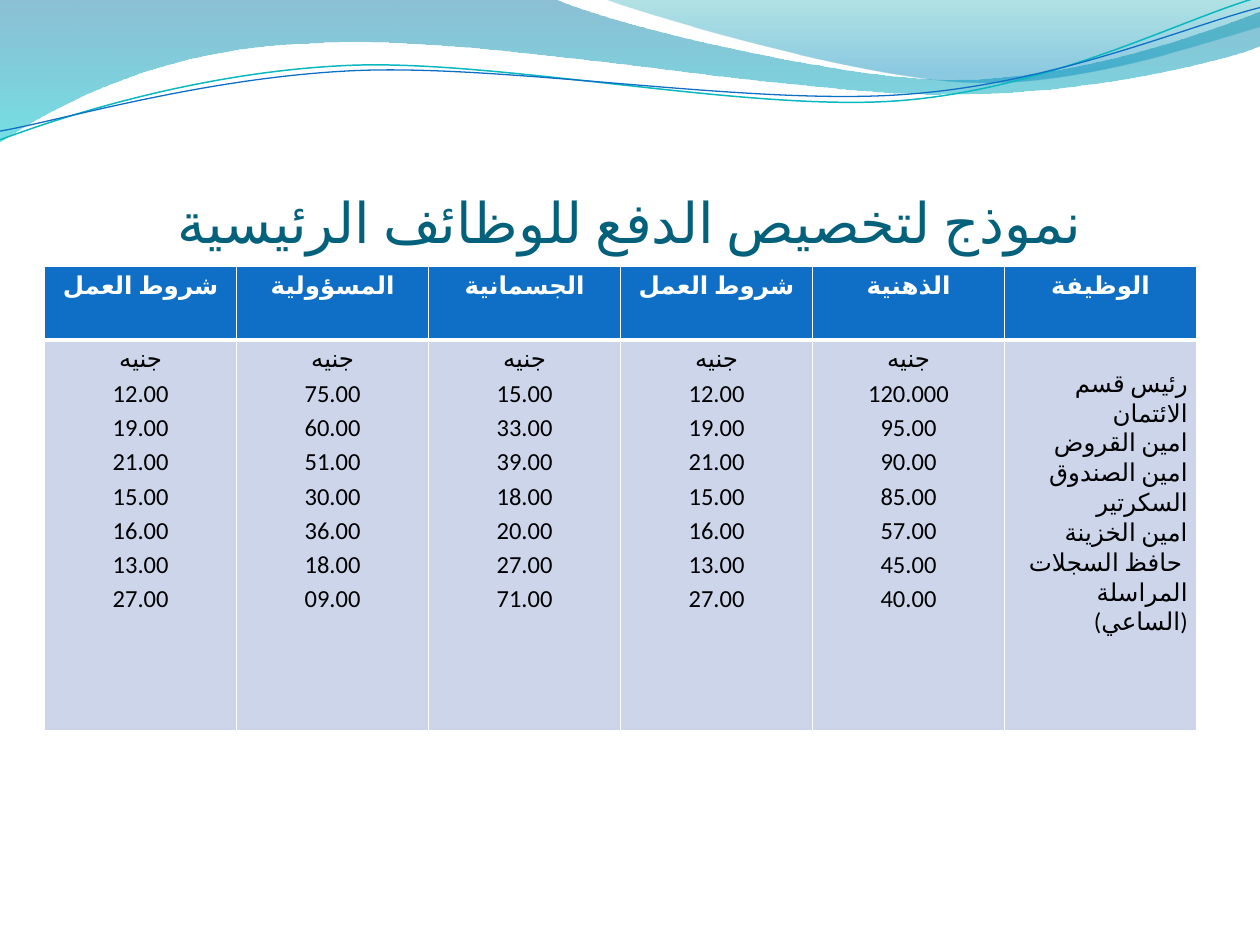
from lxml.etree import SubElement
from pptx import Presentation
from pptx.dml.color import RGBColor
from pptx.enum.lang import MSO_LANGUAGE_ID
from pptx.enum.text import MSO_ANCHOR, PP_ALIGN
from pptx.oxml import parse_xml
from pptx.oxml.ns import nsdecls, qn
from pptx.util import Pt

COLORS = {
    "title": "04617B", "header": "0F6FC6", "body": "CCD5EA",
    "white": "FFFFFF", "black": "000000", "teal line": "0AB8BF",
    "deep blue": "0074A1", "cyan": "00C6CF", "teal": "00A1A9", "blue": "008BBF",
}


def add_curve(slide, start, segments, close):
    """Draw segments of one end point (straight) or three points (Bézier)."""
    builder = slide.shapes.build_freeform(Pt(start[0]), Pt(start[1]))
    builder.add_line_segments([(Pt(x), Pt(y)) for segment in segments for x, y in segment],
                              close=close)
    shape = builder.convert_to_shape()
    shape.shadow.inherit = False
    outline = next(shape._element.iter(qn("a:path")))
    lines = iter(outline.findall(qn("a:lnTo")))
    for segment in segments:
        group = [next(lines) for point in segment]
        if len(group) == 3:
            curve = outline.makeelement(qn("a:cubicBezTo"))
            group[0].addprevious(curve)
            for line in group:
                curve.append(line[0])
                outline.remove(line)
    return shape


def write_paragraphs(text_frame, lines, size, color, align, spacing=1.0, bold=False):
    for index, line in enumerate(lines):
        paragraph = text_frame.paragraphs[0] if index == 0 else text_frame.add_paragraph()
        paragraph.text = line
        paragraph.alignment = align
        paragraph.line_spacing = spacing
        paragraph.font.name = "Calibri"
        paragraph.font.size = Pt(size)
        paragraph.font.bold = bold
        paragraph.font.color.rgb = RGBColor.from_string(COLORS[color])
        paragraph.font.language_id = MSO_LANGUAGE_ID.ARABIC
        # Arabic letters take the complex-script font and the run's language
        SubElement(paragraph.font._rPr, qn("a:cs"), typeface="Calibri")
        paragraph.runs[0].font.language_id = MSO_LANGUAGE_ID.ARABIC


presentation = Presentation()
presentation.slide_width = Pt(720)
presentation.slide_height = Pt(540)
slide = presentation.slides.add_slide(presentation.slide_layouts[6])

# Gradient waves: start, segments, (position, colour, opacity in percent)
waves = [
    ((0, 0), [
        [(316.8, -0.7)],
        [(342.7, 12.2), (478.1, 45.4), (545.8, 45.4)],
        [(614.2, 45.4), (689.8, 18.7), (720, 6.5)],
        [(720.7, 25.9)],
        [(709.2, 31.7), (626.4, 54.7), (537.1, 54)],
        [(447.8, 54), (275, 20.2), (185, 24.5)],
        [(92.9, 25.9), (33.1, 59.8), (-0.7, 81.4)],
    ], [(0, "deep blue", 45), (1, "cyan", 55)]),
    ((344.9, -0.7), [
        [(366.5, 7.9), (491, 44.6), (553.7, 46.8)],
        [(616.3, 49.7), (691.9, 23), (720, 15.1)],
        [(720, 0)],
    ], [(0, "teal", 30), (0.8, "blue", 45)]),
]
for start, segments, stops in waves:
    wave = add_curve(slide, start, segments, close=True)
    wave.line.fill.background()
    wave.fill.gradient()
    wave.fill.gradient_angle = 270
    for stop, (position, color, opacity) in zip(wave.fill.gradient_stops, stops):
        stop.position = position
        stop.color.rgb = RGBColor.from_string(COLORS[color])
    color_elements = wave.fill._xPr.iter(qn("a:srgbClr"))
    for element, (position, color, opacity) in zip(color_elements, stops):
        SubElement(element, qn("a:alpha"), val=str(opacity * 1000))

# Thin wave lines
wave_lines = [
    ((0, 79.9), [
        [(34.6, 67), (113.8, 41), (199.4, 37.4)],
        [(284.4, 33.8), (427, 64.1), (513.4, 57.6)],
        [(599.8, 51.1), (675.4, 10.8), (718.6, -1.4)],
    ], "teal line", 0.85),
    ((0, 74.9), [
        [(33.8, 69.1), (118.1, 43.9), (203.8, 40.3)],
        [(290.2, 36.7), (429.8, 60.5), (516.2, 54)],
        [(601.9, 48.2), (677.5, 15.1), (720, 4.3)],
    ], "header", 0.75),
]
for start, segments, color, width in wave_lines:
    wave_line = add_curve(slide, start, segments, close=False)
    wave_line.fill.background()
    wave_line.line.color.rgb = RGBColor.from_string(COLORS[color])
    wave_line.line.width = Pt(width)

# Title
title = slide.shapes.add_textbox(Pt(36), Pt(55.4), Pt(648), Pt(90)).text_frame
title.word_wrap = True
title.vertical_anchor = MSO_ANCHOR.BOTTOM
title.margin_left = title.margin_right = title.margin_bottom = 0
title.margin_top = Pt(3.6)
write_paragraphs(title, ["نموذج لتخصيص الدفع للوظائف الرئيسية"], 32, "title", PP_ALIGN.CENTER)

# Pay table, columns from left to right
conditions = ["12.00", "19.00", "21.00", "15.00", "16.00", "13.00", "27.00"]
pay_columns = [
    ("شروط العمل", conditions),
    ("المسؤولية", ["75.00", "60.00", "51.00", "30.00", "36.00", "18.00", "09.00"]),
    ("الجسمانية", ["15.00", "33.00", "39.00", "18.00", "20.00", "27.00", "71.00"]),
    ("شروط العمل", conditions),
    ("الذهنية", ["120.000", "95.00", "90.00", "85.00", "57.00", "45.00", "40.00"]),
]
jobs = ["رئيس قسم الائتمان", "امين القروض", "امين الصندوق", "السكرتير",
        "امين الخزينة", "حافظ السجلات ", "المراسلة (الساعي)"]
headings = [heading for heading, amounts in pay_columns] + ["الوظيفة"]

table = slide.shapes.add_table(2, 6, Pt(25.5), Pt(152.4), Pt(658.32), Pt(265)).table
table.horz_banding = False
table.rows[0].height = Pt(42)
table.rows[1].height = Pt(223)
for column in table.columns:
    column.width = Pt(109.72)

for index, heading in enumerate(headings):
    write_paragraphs(table.cell(0, index).text_frame, [heading], 14, "white",
                     PP_ALIGN.CENTER, 1.15, True)
for index, (heading, amounts) in enumerate(pay_columns):
    write_paragraphs(table.cell(1, index).text_frame, ["جنيه", *amounts], 14, "black",
                     PP_ALIGN.CENTER, 1.15)
write_paragraphs(table.cell(1, 5).text_frame, jobs, 14, "black", PP_ALIGN.RIGHT)

# Cell fills, margins and borders
for row, fill in enumerate(["header", "body"]):
    for column in range(6):
        cell = table.cell(row, column)
        cell.fill.solid()
        cell.fill.fore_color.rgb = RGBColor.from_string(COLORS[fill])
        cell.margin_left = cell.margin_right = Pt(5)
        cell.margin_top = cell.margin_bottom = 0
        properties = cell._tc.get_or_add_tcPr()
        for position, side in enumerate("LRTB"):
            at_header_edge = (row, side) in ((0, "B"), (1, "T"))
            properties.insert(position, parse_xml(
                f'<a:ln{side} {nsdecls("a")} w="{Pt(3 if at_header_edge else 1)}"><a:solidFill>'
                f'<a:srgbClr val="{COLORS["white"]}"/></a:solidFill></a:ln{side}>'))
table.cell(1, 5).margin_top = Pt(16.5)  # job names start level with the amounts

presentation.save("out.pptx")
